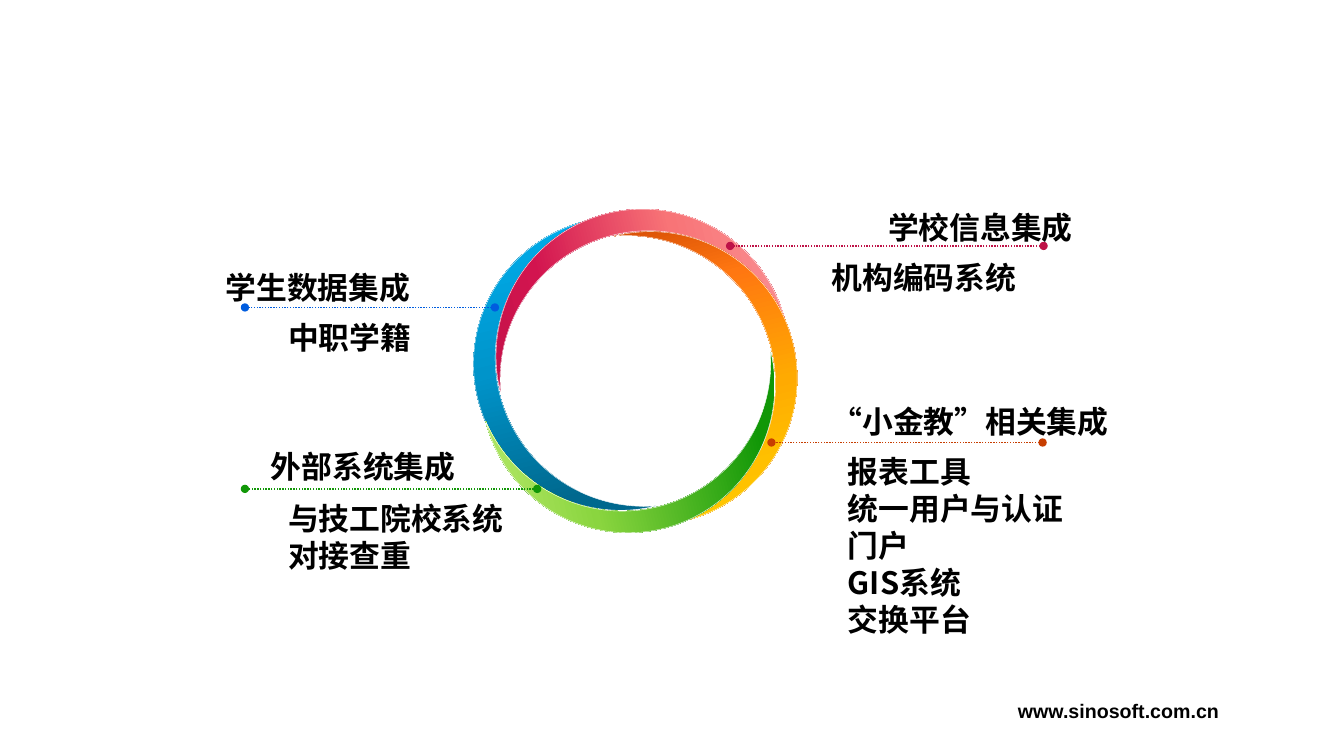
"""Build a slide with a four-part ring and four labelled integration topics."""
import math
from dataclasses import dataclass

from lxml import etree
from pptx import Presentation
from pptx import util as u
from pptx.dml.color import RGBColor
from pptx.enum import dml, shapes, text
from pptx.oxml import ns


@dataclass(frozen=True)
class Theme:
    ink: str = "000000"
    paper: str = "FFFFFF"
    blue: str = "005DDF"
    green: str = "119707"
    red: str = "BE1247"
    orange: str = "C73E01"
    blue_stops: tuple = ((17, "00688E"), (56, "0094CA"), (100, "00B0F0"))
    red_stops: tuple = ((0, "BE1247"), (27, "D2144F"), (66, "F87477"), (100, "FA9496"))
    orange_stops: tuple = ((0, "C73E01"), (27, "FF7711"), (59, "FFAA01"),
                           (80, "FFC000"), (100, "FECE02"))
    green_stops: tuple = ((18, "119707"), (67, "8AD53F"), (100, "BCEB6F"))
    font: str = "Noto Sans CJK SC"
    footer_font: str = "Arial"
    label_size: int = 22
    footer_size: int = 14


def add_element(parent, tag, **attributes):
    return etree.SubElement(parent, ns.qn(tag), **attributes)


def write(box, lines, *, font, size, color, bold=True, wrap=True):
    frame = box.text_frame
    frame.word_wrap = wrap
    frame.auto_size = text.MSO_AUTO_SIZE.SHAPE_TO_FIT_TEXT
    for index, line in enumerate(lines):
        para = frame.paragraphs[0] if index == 0 else frame.add_paragraph()
        span = para.add_run()
        span.text = line
        span.font.name = font
        span.font.size = u.Pt(size)
        span.font.bold = bold
        span.font.color.rgb = RGBColor.from_string(color)
        add_element(span.font._element, "a:ea", typeface=font)


class Page:
    COLUMNS, ROWS = 40, 30

    def __init__(self, deck, theme):
        self.theme = theme
        self.slide = deck.slides.add_slide(deck.slide_layouts[6])
        self.column = deck.slide_width / self.COLUMNS
        self.row = deck.slide_height / self.ROWS

    def x(self, columns):
        return u.Emu(round(columns * self.column))

    def y(self, rows):
        return u.Emu(round(rows * self.row))

    def box(self, left, top, width, height):
        return self.slide.shapes.add_textbox(
            self.x(left), self.y(top), self.x(width), self.y(height))

    def label(self, lines, left, top, width, line_count=None):
        height = 0.4 + 1.48 * (line_count or len(lines))
        write(self.box(left, top, width, height), lines, font=self.theme.font,
              size=self.theme.label_size, color=self.theme.ink)

    def footer(self, address):
        write(self.box(30, 27.52, 6.63, 1.36), [address], font=self.theme.footer_font,
              size=self.theme.footer_size, color=self.theme.ink, wrap=False)

    def crescent(self, center_x, center_y, width, height, rotation, stops):
        moon = self.slide.shapes.add_shape(
            shapes.MSO_SHAPE.MOON, self.x(center_x - width / 2),
            self.y(center_y - height / 2), self.x(width), self.y(height))
        moon.adjustments[0] = 0.152
        moon.rotation = rotation
        moon.shadow.inherit = False
        moon.line.color.rgb = RGBColor.from_string(self.theme.paper)
        moon.line.width = u.Pt(0.25)
        moon.fill.gradient()
        moon.fill.gradient_angle = 90
        stop_list = moon._element.spPr.find(".//" + ns.qn("a:gsLst"))
        for stop in list(stop_list):
            stop_list.remove(stop)
        for percent, color in stops:
            stop = add_element(stop_list, "a:gs", pos=str(percent * 1000))
            add_element(stop, "a:srgbClr", val=color)

    def ring(self, center_x, center_y, radius_inches, palettes):
        radius = u.Inches(radius_inches)
        for index, stops in enumerate(palettes):
            angle = math.radians(173 + 90 * index)
            self.crescent(center_x + radius * math.cos(angle) / self.column,
                          center_y + radius * math.sin(angle) / self.row,
                          4.38, 11.64, (345.9 + 90 * index) % 360, stops)

    def leader(self, start, end, row, color):
        line = self.slide.shapes.add_connector(
            shapes.MSO_CONNECTOR.STRAIGHT, self.x(start), self.y(row),
            self.x(end), self.y(row))
        line.line.color.rgb = RGBColor.from_string(color)
        line.line.width = u.Pt(1)
        line.line.dash_style = dml.MSO_LINE.ROUND_DOT
        outline = line.line._get_or_add_ln()
        for tag in ("a:headEnd", "a:tailEnd"):
            add_element(outline, tag, type="oval")
        add_element(line._element.spPr, "a:effectLst")

    def topic(self, color, leader, title, title_at, details, details_at):
        self.leader(*leader, color)
        self.label([title], *title_at)
        self.label(details, *details_at)


def main():
    deck = Presentation()
    deck.slide_width, deck.slide_height = u.Inches(13.33), u.Inches(7.5)
    theme = Theme()
    page = Page(deck, theme)
    page.footer("www.sinosoft.com.cn")
    page.ring(18.91, 14.72, 0.86, (theme.blue_stops, theme.red_stops,
                                   theme.orange_stops, theme.green_stops))
    page.topic(theme.blue, (14.73, 7.29, 12.2), "学生数据集成", (6.42, 10.48, 7.02),
               ["中职学籍"], (8.28, 12.44, 5.67))
    page.topic(theme.green, (15.99, 7.29, 19.4), "外部系统集成", (7.77, 17.56, 6.15),
               ["与技工院校系统对接查重"], (8.28, 19.64, 7.05, 2))
    page.topic(theme.red, (31.06, 21.73, 9.76), "学校信息集成", (26.14, 8.08, 6.54),
               ["机构编码系统"], (24.46, 10.08, 6.54))
    page.topic(theme.orange, (31.03, 22.96, 17.56), "“小金教”相关集成", (24.46, 15.8, 9.42),
               ["报表工具", "统一用户与认证", "门户", "GIS系统", "交换平台"],
               (24.94, 17.76, 8.46))
    deck.save("out.pptx")


if __name__ == "__main__":
    main()
